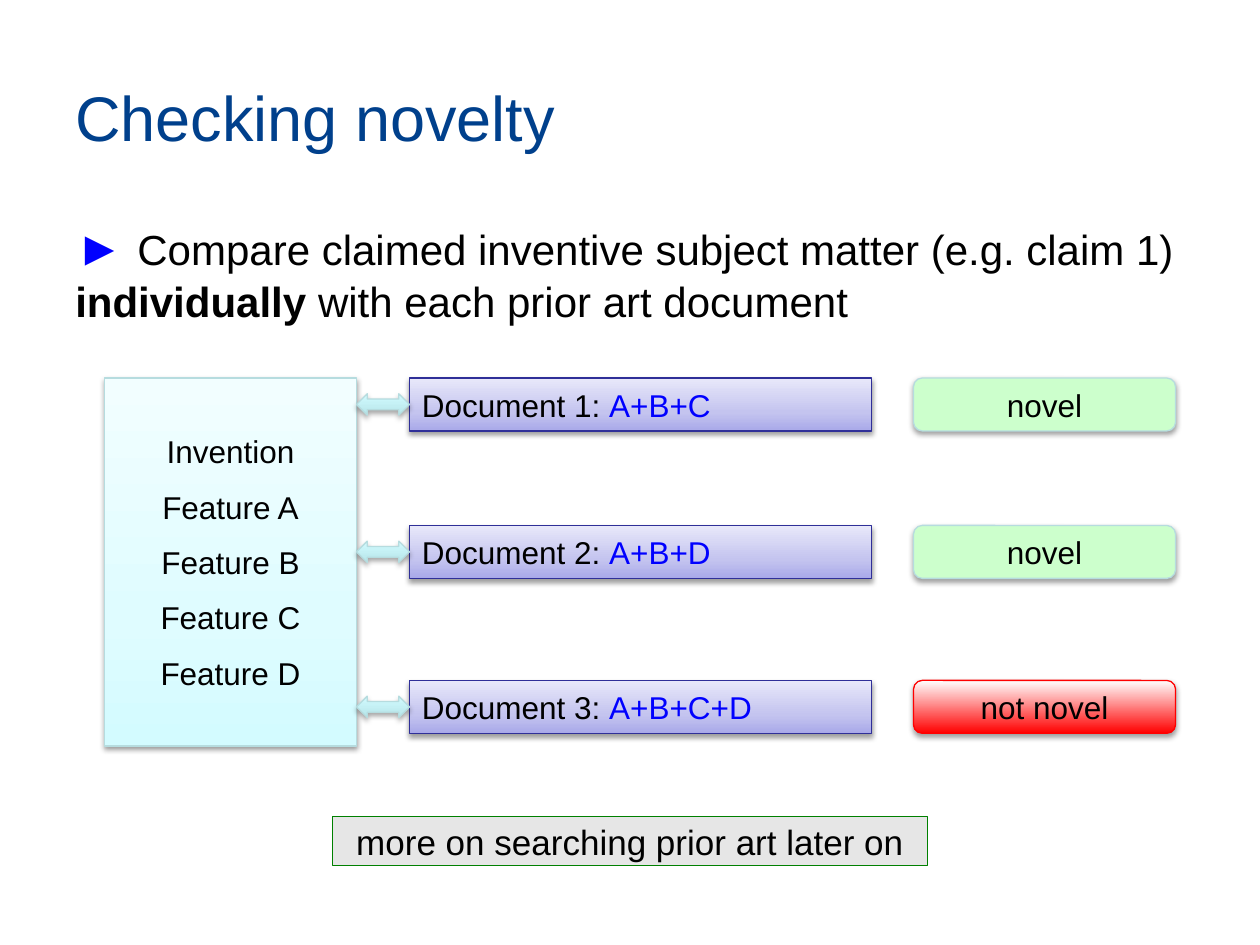
from lxml import etree
from pptx import Presentation
from pptx import util as u
from pptx.dml.color import RGBColor
from pptx.enum import shapes, text
from pptx.oxml.ns import qn

FONT = "Arial"
COLORS = {
    "title": "00408C",
    "black": "000000",
    "blue": "0000FF",
    "aqua_line": "B6DCDF",
    "navy_line": "2F2F98",
    "green": "CCFFCC",
    "red": "FF0000",
    "grey": "E6E6E6",
    "green_line": "008000",
}
AQUA = [(0, "D3FBFF"), (35, "DFFCFF"), (100, "F2FEFF")]
LILAC = [(0, "A9A9E9"), (35, "C4C4EF"), (100, "E8E8FA")]
RED = [(0, "FF0000"), (100, "FFFFFF")]
ARROW = [(0, "B5E5E9"), (100, "D3FBFF")]
ROW_HEIGHT = 0.42
ARROW_HEIGHT = 0.17


def rgb(name):
    return RGBColor.from_string(COLORS[name])


def set_gradient(fill, stops):
    fill.gradient()
    fill.gradient_angle = 90
    gs_lst = fill._fill._gradFill.find(qn("a:gsLst"))
    for gs in list(gs_lst):
        gs_lst.remove(gs)
    for pos, color in stops:
        gs = etree.SubElement(gs_lst, qn("a:gs"), pos=str(pos * 1000))
        etree.SubElement(gs, qn("a:srgbClr"), val=color)


def add_shadow(sp, dist, alpha):
    effects = sp._element.spPr.find(qn("a:effectLst"))
    shadow = etree.SubElement(
        effects, qn("a:outerShdw"), blurRad=str(u.Pt(3.1)), dist=str(u.Pt(dist)),
        dir="5400000", rotWithShape="0")
    color = etree.SubElement(shadow, qn("a:srgbClr"), val=COLORS["black"])
    etree.SubElement(color, qn("a:alpha"), val=str(alpha * 1000))


def add_runs(p, runs, size):
    p.font.name = FONT
    p.font.size = u.Pt(size)
    for content, color in runs:
        r = p.add_run()
        r.text = content
        r.font.color.rgb = rgb(color)


def add_text(s, box, anchor):
    tf = s.shapes.add_textbox(*map(u.Inches, box)).text_frame
    tf.word_wrap = True
    tf.vertical_anchor = anchor
    return tf.paragraphs[0]


def add_box(s, kind, box, fill, line, shadow=(1.6, 38)):
    sp = s.shapes.add_shape(kind, *map(u.Inches, box))
    sp.shadow.inherit = False
    if isinstance(fill, list):
        set_gradient(sp.fill, fill)
    else:
        sp.fill.solid()
        sp.fill.fore_color.rgb = rgb(fill)
    sp.line.color.rgb = rgb(line)
    sp.line.width = u.Pt(0.75)
    if shadow:
        add_shadow(sp, *shadow)
    return sp


def fill_text(sp, lines, size=18, align=text.PP_ALIGN.CENTER):
    tf = sp.text_frame
    tf.word_wrap = True
    tf.vertical_anchor = text.MSO_ANCHOR.MIDDLE
    for i, runs in enumerate(lines):
        p = tf.add_paragraph() if i else tf.paragraphs[0]
        p.alignment = align
        if i:
            p.space_before = u.Pt(10)
        add_runs(p, runs, size)


def add_comparison(s, top, name, features, verdict, fill, line):
    kinds = shapes.MSO_SHAPE
    document = add_box(s, kinds.RECTANGLE, (3.25, top, 3.67, ROW_HEIGHT),
                       LILAC, "navy_line")
    fill_text(document, [[(name + ": ", "black"), (features, "blue")]],
              align=text.PP_ALIGN.LEFT)
    arrow_top = top + (ROW_HEIGHT - ARROW_HEIGHT) / 2
    add_box(s, kinds.LEFT_RIGHT_ARROW, (2.83, arrow_top, 0.42, ARROW_HEIGHT),
            ARROW, "aqua_line", (1.8, 35))
    result = add_box(s, kinds.ROUNDED_RECTANGLE, (7.25, top, 2.08, ROW_HEIGHT),
                     fill, line)
    fill_text(result, [[(verdict, "black")]])


def add_heading(s):
    p = add_text(s, (0.5, 0.3, 9, 1.25), text.MSO_ANCHOR.MIDDLE)
    add_runs(p, [("Checking novelty", "title")], 36)
    p = add_text(s, (0.5, 1.67, 9, 1.1), text.MSO_ANCHOR.TOP)
    add_runs(p, [
        ("► ", "blue"),
        ("Compare claimed inventive subject matter (e.g. claim 1) ", "black"),
        ("individually ", "black"),
        ("with each prior art document", "black"),
    ], 24)
    p.runs[0].font.size = u.Pt(28)
    p.runs[2].font.bold = True


def main():
    prs = Presentation()
    prs.slide_width, prs.slide_height = u.Inches(10), u.Inches(7.5)
    s = prs.slides.add_slide(prs.slide_layouts[6])
    add_heading(s)

    rect = shapes.MSO_SHAPE.RECTANGLE
    invention = add_box(s, rect, (0.83, 3, 2, 2.92), AQUA, "aqua_line")
    lines = ["Invention"] + [f"Feature {letter}" for letter in "ABCD"]
    fill_text(invention, [[(line, "black")] for line in lines])

    rows = [
        (3, "Document 1", "A+B+C", "novel", "green", "aqua_line"),
        (4.17, "Document 2", "A+B+D", "novel", "green", "aqua_line"),
        (5.4, "Document 3", "A+B+C+D", "not novel", RED, "red"),
    ]
    for row in rows:
        add_comparison(s, *row)

    note = add_box(s, rect, (2.64, 6.48, 4.72, 0.39), "grey", "green_line", None)
    fill_text(note, [[("more on searching prior art later on", "black")]], 20)
    prs.save("out.pptx")


if __name__ == "__main__":
    main()
